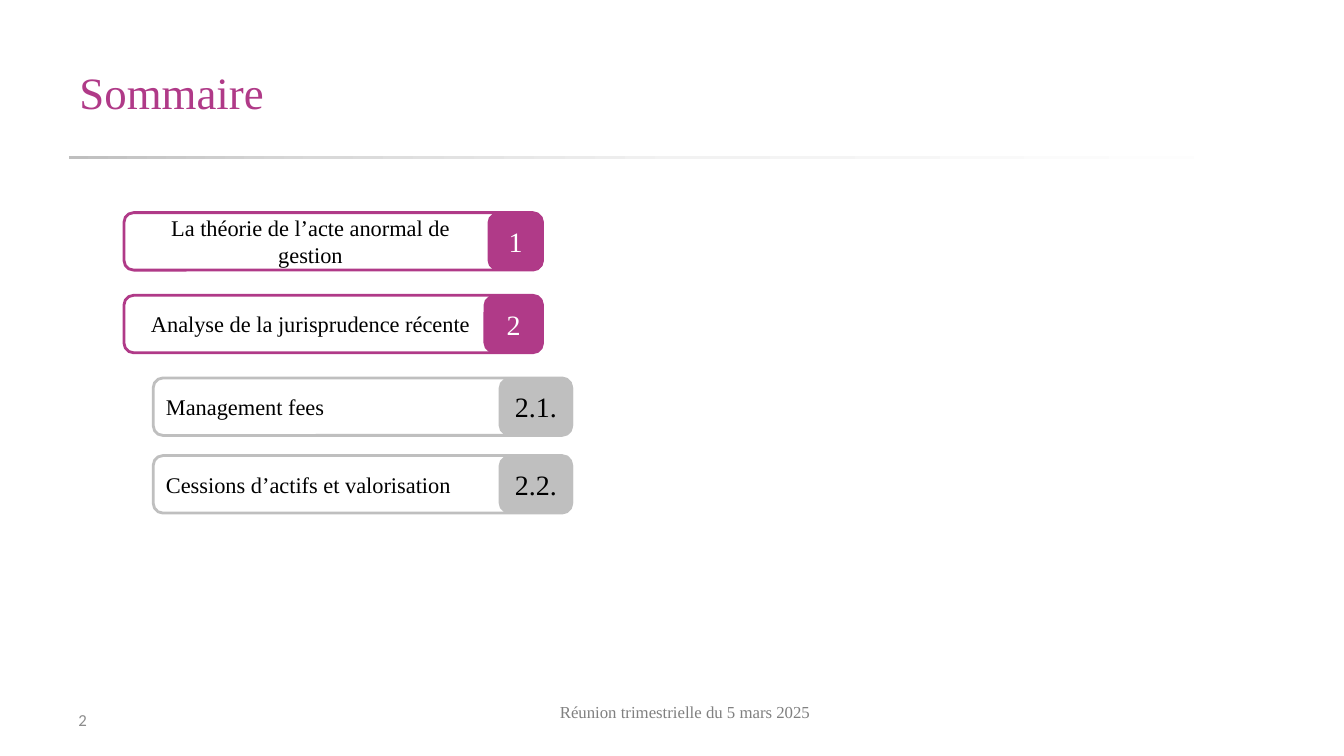
from lxml import etree
from pptx import Presentation
from pptx import util as u
from pptx.dml.color import RGBColor
from pptx.enum import shapes, text
from pptx.oxml.ns import qn

PX = 9144  # EMU per px, 100 px to the inch
LEFT, CENTER = text.PP_ALIGN.LEFT, text.PP_ALIGN.CENTER
PURPLE, GREY, BLACK, WHITE = "B03A88", "BFBFBF", "000000", "FFFFFF"


def rgb(value):
    return RGBColor.from_string(value)


class SummarySlide:
    font = "Times New Roman"

    def __init__(self, prs):
        self.shapes = prs.slides.add_slide(prs.slide_layouts[6]).shapes

    def set_words(self, shape, words, size, color, align, middle=True, font=None, right=10):
        frame = shape.text_frame
        frame.text = words
        frame.word_wrap = True
        frame.vertical_anchor = text.MSO_ANCHOR.MIDDLE if middle else text.MSO_ANCHOR.TOP
        frame.margin_right = right * PX
        paragraph = frame.paragraphs[0]
        paragraph.alignment = align
        run_font = paragraph.runs[0].font
        run_font.name = font or self.font
        run_font.size = u.Pt(size)
        run_font.color.rgb = rgb(color)

    def label(self, box, words, size, color, align=LEFT, **options):
        shape = self.shapes.add_textbox(*(v * PX for v in box))
        self.set_words(shape, words, size, color, align, **options)

    def block(self, kind, box):
        shape = self.shapes.add_shape(kind, *(v * PX for v in box))
        shape.shadow.inherit = False
        return shape

    def fading_rule(self, box, stops):
        """Thin bar with a left-to-right gradient; stops are (percent, colour)."""
        bar = self.block(shapes.MSO_SHAPE.RECTANGLE, box)
        bar.line.fill.background()
        bar.fill.gradient()
        bar.fill.gradient_angle = 0
        stop_list = bar._element.spPr.find(".//" + qn("a:gsLst"))
        for old_stop in list(stop_list):
            stop_list.remove(old_stop)
        for percent, color in stops:
            stop = etree.SubElement(stop_list, qn("a:gs"), pos=str(percent * 1000))
            etree.SubElement(stop, qn("a:srgbClr"), val=color)

    def rounded(self, box, line, fill=None):
        shape = self.block(shapes.MSO_SHAPE.ROUNDED_RECTANGLE, box)
        shape.line.color.rgb = rgb(line)
        shape.line.width = u.Pt(2)
        if fill:
            shape.fill.solid()
            shape.fill.fore_color.rgb = rgb(fill)
        else:
            shape.fill.background()
        return shape

    def entry(self, left, top, number, heading, badge_width, color, number_color, align):
        """Outlined heading with its number in a badge at the right end."""
        width = 415
        frame = self.rounded((left, top, width, 57), color)
        self.set_words(frame, heading, 16, BLACK, align, right=55)
        badge_box = (left + width - badge_width, top + 1, badge_width, 55)
        badge = self.rounded(badge_box, color, color)
        self.set_words(badge, number, 20, number_color, CENTER)


def main():
    prs = Presentation()
    prs.slide_width, prs.slide_height = 1333 * PX, 750 * PX
    slide = SummarySlide(prs)

    slide.label((68, 694, 337, 40), "2", 12, "8C8C8C", font="Calibri")
    slide.fading_rule((68, 155, 1200, 3),
                      [(0, GREY), (21, "D9D9D9"), (51, "F2F2F2"), (100, WHITE)])
    slide.label((69, 28, 1200, 125), "Sommaire", 32, PURPLE)
    slide.label((524, 691, 311, 40), "Réunion trimestrielle du 5 mars 2025", 12, "808080",
                CENTER, middle=False)

    chapter = (PURPLE, WHITE, CENTER)
    section = (GREY, BLACK, LEFT)
    for left, top, number, heading, badge_width, style in [
        (123, 211, "1", "La théorie de l’acte anormal de gestion", 53, chapter),
        (123, 293, "2", "Analyse de la jurisprudence récente", 57, chapter),
        (152, 375, "2.1.", "Management fees", 71, section),
        (152, 452, "2.2.", "Cessions d’actifs et valorisation", 71, section),
    ]:
        slide.entry(left, top, number, heading, badge_width, *style)

    prs.save("out.pptx")


if __name__ == "__main__":
    main()
